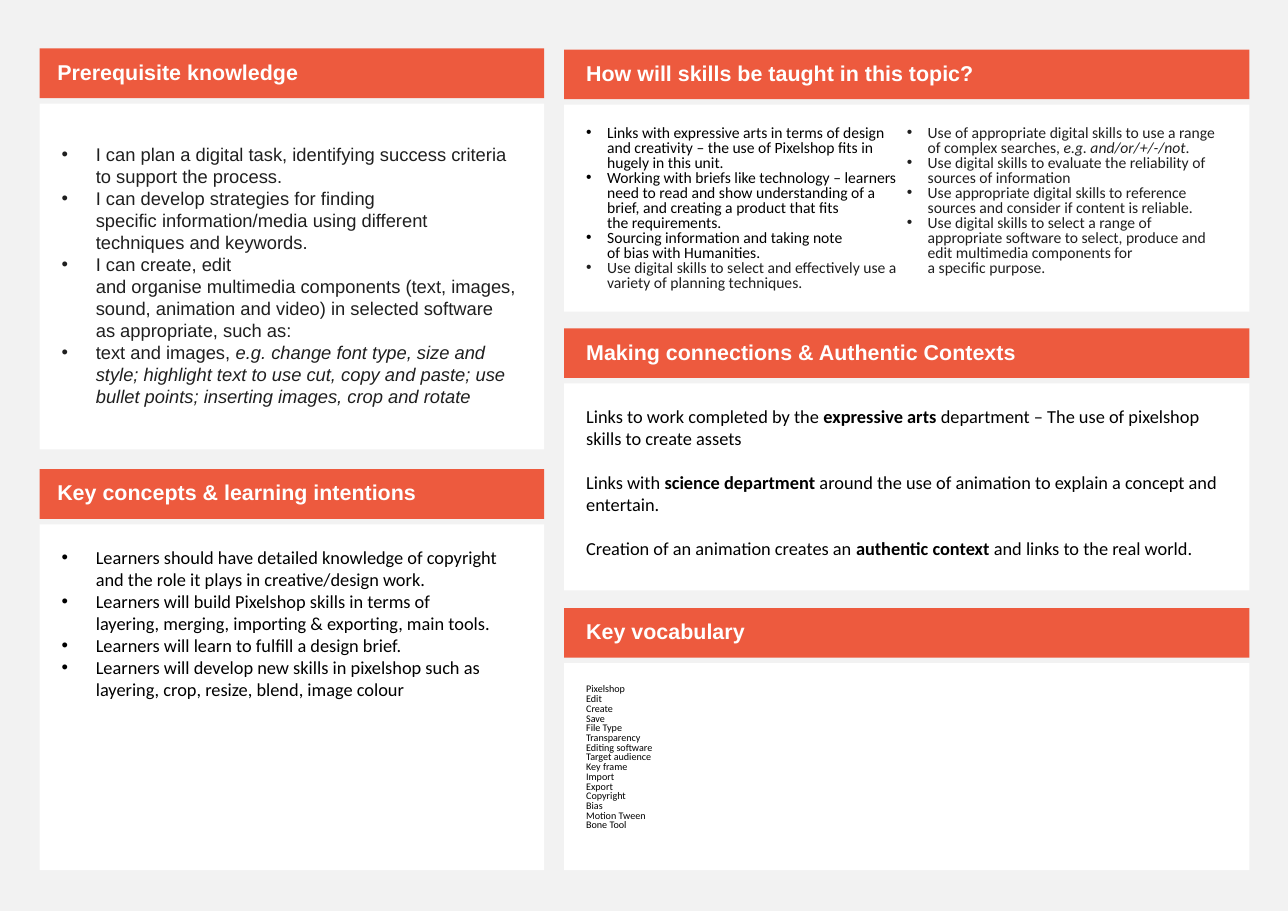
from lxml import etree
from pptx import Presentation
from pptx import util as u
from pptx.dml.color import RGBColor
from pptx.enum import shapes, text
from pptx.oxml.ns import qn

SCALE = 9144
GAP = 50
HEAD = 45
LINE = u.Pt(14.4)

PRIOR = [
    "I can plan a digital task, identifying success~criteria to support the process.",
    "I can develop strategies for finding specific~information/media using different "
    "techniques~and keywords.",
    "I can create, edit and~organise~multimedia~components (text, images, sound, "
    "animation~and video) in selected software as~appropriate, such as:",
    "text and images,~*e.g. change font type, size~and style; highlight text to use cut, "
    "copy and~paste; use bullet points; inserting images,~crop and rotate",
]
AIMS = [
    "Learners should have detailed knowledge of copyright and the role it~plays in "
    "creative/design~work.~",
    "Learners will build Pixelshop skills in terms of layering,~merging,~importing & "
    "exporting,~main~tools.~",
    "Learners will learn to fulfill a design~brief.~",
    "Learners will develop new skills in pixelshop such as layering, crop, "
    "resize,~blend,~image colour",
]
SKILLS = [
    "Links with expressive arts in terms of design and~creativity – the use of Pixelshop "
    "fits in hugely~in this~unit.~",
    "Working with briefs like technology – learners need to~read and show understanding "
    "of a brief, and creating a product that~fits the~requirements.~",
    "Sourcing information and taking note of~bias~with~Humanities.~",
    "Use digital skills to select and effectively use a variety of planning~techniques.",
    "Use~of appropriate digital skills to use a range of complex searches,~"
    "*e.g.~and/or/+/-/not*.",
    "Use digital skills to evaluate the reliability of sources of~information",
    "Use appropriate digital skills to reference sources and consider if content "
    "is~reliable.",
    "Use digital skills to select a range of appropriate software to select, produce and "
    "edit multimedia~components for a~specific~purpose.",
]
LINKS = [
    "Links to work completed by the~*expressive arts*~department – The use~of pixelshop "
    "skills to create assets",
    "Links with~*science department*~around the use of animation to explain~a concept "
    "and entertain.~~",
    "Creation of an animation~creates an~*authentic context*~and links to the~real world.",
]
WORDS = [
    "Pixelshop", "Edit", "Create", "Save", "File Type", "Transparency",
    "Editing software", "Target audience", "Key frame", "Import", "Export",
    "Copyright", "Bias", "Motion Tween", "Bone Tool",
]


def px(n):
    return u.Emu(n * SCALE)


def hue(code):
    return RGBColor.from_string(code)


def panel(slide, box, fill, pads, hold=None):
    area = [px(n) for n in box]
    item = hold or slide.shapes.add_shape(shapes.MSO_SHAPE.RECTANGLE, *area)
    item.left, item.top, item.width, item.height = area
    item.fill.solid()
    item.fill.fore_color.rgb = hue(fill)
    item.line.fill.background()
    item.shadow.inherit = False
    frame = item.text_frame
    frame.word_wrap = True
    frame.auto_size = text.MSO_AUTO_SIZE.NONE
    frame.vertical_anchor = text.MSO_ANCHOR.TOP
    (frame.margin_left, frame.margin_top,
     frame.margin_right, frame.margin_bottom) = [px(n) for n in pads]
    return frame


def para(frame, first, line, gap=0, dent=0):
    p = frame.paragraphs[0] if first else frame.add_paragraph()
    p.alignment = text.PP_ALIGN.LEFT
    p.line_spacing = line
    p.space_before = u.Pt(0 if first else gap)
    p.space_after = u.Pt(0)
    props = p._p.get_or_add_pPr()
    props.set("marL", str(px(dent)))
    props.set("indent", str(px(-dent)))
    if dent:
        etree.SubElement(props, qn("a:buFont"), typeface="Arial")
        etree.SubElement(props, qn("a:buChar"), char="•")
    else:
        etree.SubElement(props, qn("a:buNone"))
    return p


def write(p, words, face, size, ink, bold=False, slant=False):
    run = p.add_run()
    run.text = words.replace("~", chr(160))
    font = run.font
    font.name, font.size = face, u.Pt(size)
    font.bold, font.italic = bold, slant
    font.color.rgb = hue(ink)


def header(slide, box, words, pad, hold=None):
    frame = panel(slide, box, "ED5A3E", (pad, 5, 10, 5), hold)
    frame.vertical_anchor = text.MSO_ANCHOR.MIDDLE
    write(para(frame, True, 0.9), words, "Arial", 14, "FFFFFF", bold=True)


def body(slide, box, items, hold=None, face="Calibri", size=12, line=LINE, gap=0,
         dent=0, dark=99, slant=False, cols=1, top=20, foot=20):
    frame = panel(slide, box, "FFFFFF", (20, top, 20, foot), hold)
    frame._txBody.bodyPr.set("numCol", str(cols))
    for i, item in enumerate(items):
        p = para(frame, i == 0, line, gap, dent)
        ink = "000000" if i < dark else "1F1F1F"
        for j, part in enumerate(item.split("*")):
            mark = j % 2 == 1
            write(p, part, face, size, ink, mark and not slant, mark and slant)


def card(slide, box, name, pad, items, title=None, hold=None, **style):
    x, y, w, h = box
    header(slide, (x, y, w, HEAD), name, pad, title)
    body(slide, (x, y + GAP, w, h - GAP), items, hold, **style)


def left(slide, box, title, holds):
    x, y, w, h = box
    cards = [
        ("Prerequisite knowledge", PRIOR,
         dict(face="Arial", dent=31, dark=0, slant=True, top=36)),
        ("Key concepts & learning intentions", AIMS, dict(dent=31)),
    ]
    tops = [title, None]
    for i, (name, items, style) in enumerate(cards):
        spot = (x, y + 382 * i, w, h)
        card(slide, spot, name, 16, items, tops[i], holds[i], **style)


def right(slide, box, holds):
    x, y, w, h = box
    cards = [
        ("How will skills be taught in this topic?", SKILLS,
         dict(size=10.2, line=0.8, dent=19, dark=3, slant=True, cols=2, foot=12)),
        ("Making connections & Authentic Contexts", LINKS, dict(gap=14.4)),
        ("Key vocabulary", WORDS, dict(size=6.6, line=0.8)),
    ]
    for i, (name, items, style) in enumerate(cards):
        spot = (x, y + 507 * i // 2, w, h)
        card(slide, spot, name, 20, items, None, holds[i], **style)


def main():
    deck = Presentation()
    deck.slide_width, deck.slide_height = px(1169), px(827)
    slide = deck.slides.add_slide(deck.slide_layouts[4])
    slide.background.fill.solid()
    slide.background.fill.fore_color.rgb = hue("F2F2F2")
    holds = [slide.placeholders[n] for n in (1, 2, 3, 4)]
    left(slide, (36, 44, 458, 364), slide.shapes.title, holds[:2])
    right(slide, (512, 45, 622, 238), holds[2:] + [None])
    deck.save("out.pptx")


if __name__ == "__main__":
    main()
